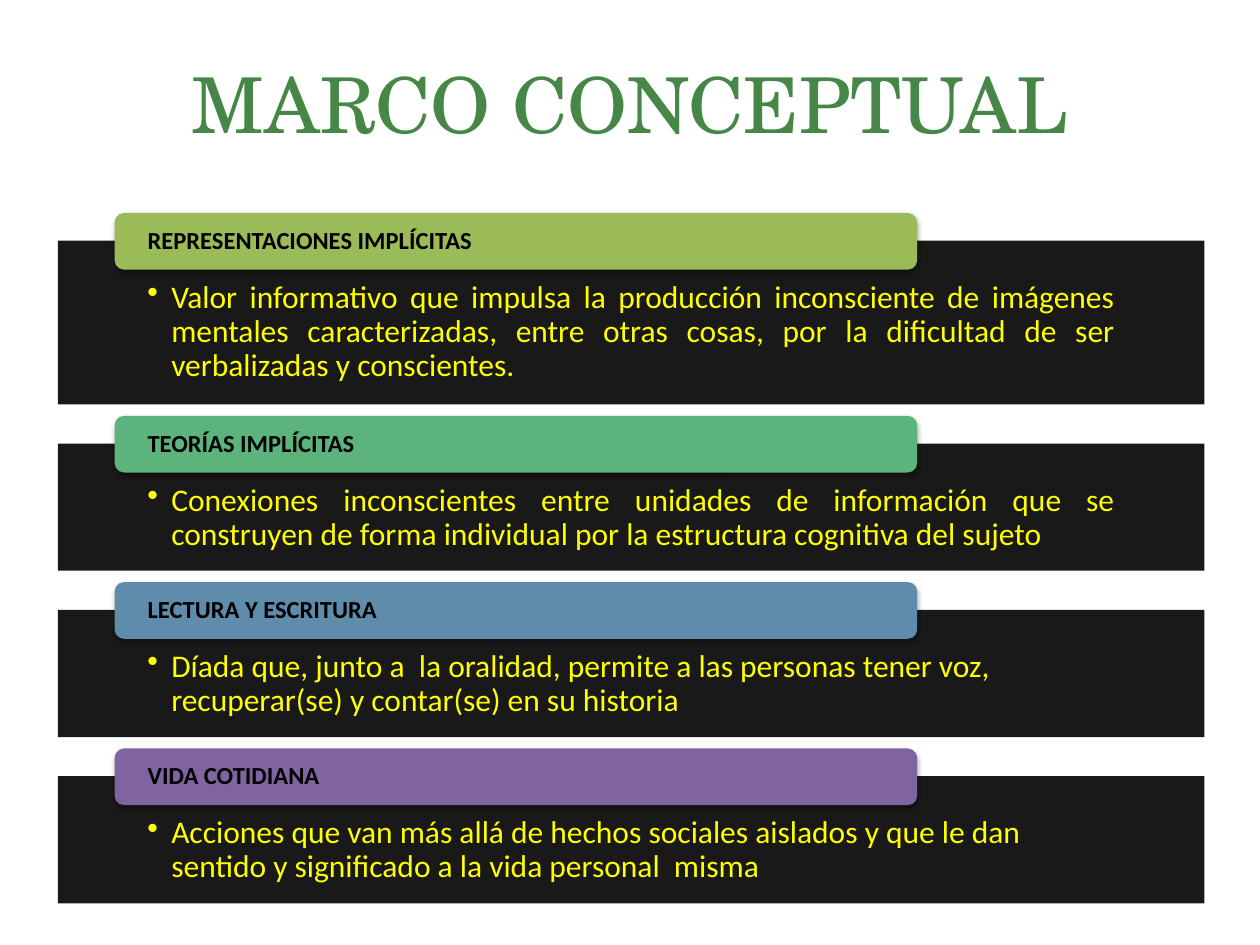
from dataclasses import dataclass

from lxml.etree import SubElement
from pptx import Presentation
from pptx.dml.color import RGBColor
from pptx.enum.shapes import MSO_SHAPE as Shape
from pptx.enum.text import MSO_ANCHOR as Anchor, PP_ALIGN as Align
from pptx.oxml.ns import qn
from pptx.util import Inches, Pt

BLACK = RGBColor(0x00, 0x00, 0x00)
YELLOW = RGBColor(0xFF, 0xFF, 0x00)
TITLE_GREEN = RGBColor(0x46, 0x86, 0x46)
LIME = RGBColor(0x9B, 0xBB, 0x59)
GREEN = RGBColor(0x5C, 0xB3, 0x7C)
BLUE = RGBColor(0x60, 0x8C, 0xAB)
PURPLE = RGBColor(0x80, 0x64, 0xA2)

FIRST_TOP = 1.91
PANEL_GAP = 0.31
TAB_RISE = 0.22
TAB_HEIGHT = 0.45


@dataclass(frozen=True)
class Concept:
    heading: str
    definition: str
    color: RGBColor
    height: float = 1.01
    align: Align = Align.LEFT


CONCEPTS = [
    Concept(
        "REPRESENTACIONES IMPLÍCITAS",
        "Valor informativo que impulsa la producción inconsciente de imágenes "
        "mentales caracterizadas, entre otras cosas, por la dificultad de ser "
        "verbalizadas y conscientes.",
        LIME, height=1.3, align=Align.JUSTIFY,
    ),
    Concept(
        "TEORÍAS IMPLÍCITAS",
        "Conexiones inconscientes entre unidades de información que se "
        "construyen de forma individual por la estructura cognitiva del sujeto",
        GREEN, align=Align.JUSTIFY,
    ),
    Concept(
        "LECTURA Y ESCRITURA",
        "Díada que, junto a  la oralidad, permite a las personas tener voz, "
        "recuperar(se) y contar(se) en su historia",
        BLUE,
    ),
    Concept(
        "VIDA COTIDIANA",
        "Acciones que van más allá de hechos sociales aislados y que le dan "
        "sentido y significado a la vida personal  misma",
        PURPLE,
    ),
]


def write_text(box, text: str, *, size: float, color: RGBColor,
               font: str = "Calibri", bold: bool = False,
               align: Align = Align.LEFT, anchor: Anchor = Anchor.TOP,
               insets: tuple = (0.1, 0.05, 0.1, 0.05),
               line_spacing: float = 0.9, bullet: bool = False) -> None:
    frame = box.text_frame
    frame.word_wrap = True
    frame.vertical_anchor = anchor
    (frame.margin_left, frame.margin_top,
     frame.margin_right, frame.margin_bottom) = map(Inches, insets)
    para = frame.paragraphs[0]
    if bullet:
        props = para._p.get_or_add_pPr()
        props.set("marL", str(Inches(0.19)))
        props.set("indent", str(Inches(-0.19)))
        SubElement(props, qn("a:buChar"), char="•")
    para.alignment = align
    para.line_spacing = line_spacing
    span = para.add_run()
    span.text = text
    span.font.name = font
    span.font.size = Pt(size)
    span.font.bold = bold
    span.font.color.rgb = color


def add_block(page, kind: Shape, left: float, top: float, width: float,
              height: float, color: RGBColor):
    block = page.shapes.add_shape(
        kind, Inches(left), Inches(top), Inches(width), Inches(height))
    block.shadow.inherit = False
    block.fill.solid()
    block.fill.fore_color.rgb = color
    block.line.fill.background()
    return block


def set_opacity(block, percent: int) -> None:
    color = block._element.spPr.find(qn("a:solidFill"))[0]
    SubElement(color, qn("a:alpha"), val=str(percent * 1000))


def cast_shadow(block) -> None:
    effects = block._element.spPr.find(qn("a:effectLst"))
    shadow = SubElement(effects, qn("a:outerShdw"), blurRad=str(Pt(3.1)),
                        dist=str(Pt(1.8)), dir="5400000", rotWithShape="0")
    color = SubElement(shadow, qn("a:srgbClr"), val=str(BLACK))
    SubElement(color, qn("a:alpha"), val="35000")


def draw_concept(page, concept: Concept, top: float) -> None:
    panel = add_block(page, Shape.RECTANGLE, 0.46, top, 9.1, concept.height, BLACK)
    set_opacity(panel, 90)
    write_text(panel, concept.definition, size=18, color=YELLOW,
               align=concept.align, insets=(0.71, 0.32, 0.71, 0.14), bullet=True)

    tab = add_block(page, Shape.ROUNDED_RECTANGLE, 0.91, top - TAB_RISE,
                    6.37, TAB_HEIGHT, concept.color)
    cast_shadow(tab)
    write_text(tab, concept.heading, size=14, color=BLACK, bold=True,
               anchor=Anchor.MIDDLE, insets=(0.24, 0, 0.24, 0))


def main() -> None:
    deck = Presentation()
    deck.slide_width, deck.slide_height = Inches(10), Inches(7.5)
    page = deck.slides.add_slide(deck.slide_layouts[6])

    title = page.shapes.add_textbox(
        Inches(0.69), Inches(0.4), Inches(8.62), Inches(1.45))
    write_text(title, "MARCO CONCEPTUAL", size=44, color=TITLE_GREEN,
               font="TeX Gyre Schola", align=Align.CENTER, line_spacing=1.0)

    top = FIRST_TOP
    for concept in CONCEPTS:
        draw_concept(page, concept, top)
        top += concept.height + PANEL_GAP

    deck.save("out.pptx")


if __name__ == "__main__":
    main()
